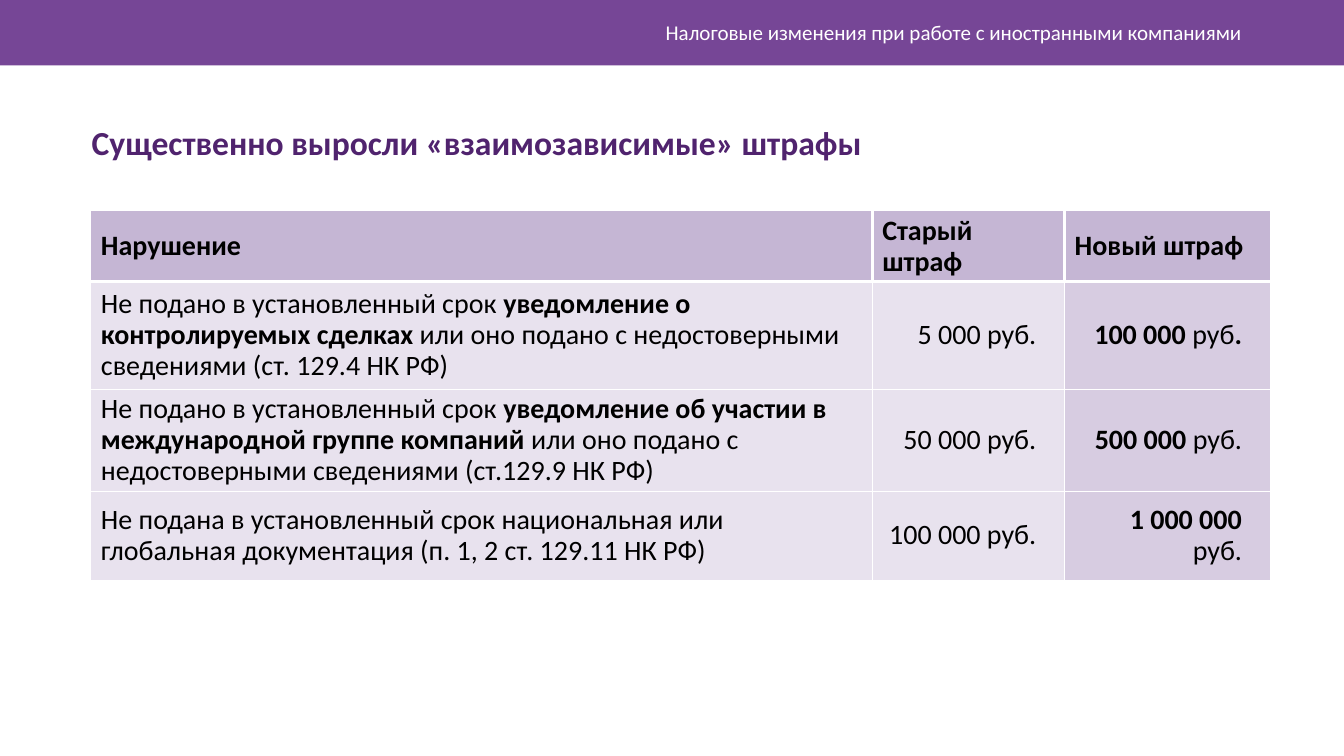
from lxml.etree import SubElement
from pptx import Presentation
from pptx.dml.color import RGBColor
from pptx.enum.shapes import MSO_SHAPE
from pptx.enum.text import MSO_ANCHOR, PP_ALIGN
from pptx.oxml.ns import qn
from pptx.util import Cm, Pt

BAND = RGBColor(0x76, 0x46, 0x96)
TITLE = RGBColor(0x50, 0x23, 0x6E)
CELL = RGBColor(0x8D, 0x6F, 0xAB)
WHITE = RGBColor(0xFF, 0xFF, 0xFF)
BLACK = RGBColor(0x00, 0x00, 0x00)

COLUMNS = [19.69, 4.85, 5.18]
ROWS = [1.45, 2.72, 2.57, 2.24]
FINES = [
    [[("Нарушение", True)], [("Старый штраф", True)], [("Новый штраф", True)]],
    [
        [
            ("Не подано в установленный срок ", False),
            ("уведомление о контролируемых сделках", True),
            (" или оно подано с недостоверными сведениями (ст. 129.4 НК РФ)", False),
        ],
        [("5 000 руб.", False)],
        [("100 000", True), (" руб", False), (".", True)],
    ],
    [
        [
            ("Не подано в установленный срок ", False),
            ("уведомление об участии в международной группе компаний ", True),
            ("или оно подано с недостоверными сведениями (ст.129.9 НК РФ)", False),
        ],
        [("50 000 руб.", False)],
        [("500 000 ", True), ("руб.", False)],
    ],
    [
        [("Не подана в установленный срок национальная или глобальная документация "
          "(п. 1, 2 ст. 129.11 НК РФ)", False)],
        [("100 000 руб.", False)],
        [("1 000 000 ", True), ("руб.", False)],
    ],
]


class SlideBuilder:
    def __init__(self, s, font):
        self.s = s
        self.font = font

    def add_runs(self, p, runs, size, color, align=PP_ALIGN.LEFT):
        p.alignment = align
        for text, bold in runs:
            r = p.add_run()
            r.text = text
            r.font.name = self.font
            r.font.size = Pt(size)
            r.font.bold = bold
            r.font.color.rgb = color

    def band(self, x, y, w, h, color):
        sp = self.s.shapes.add_shape(MSO_SHAPE.RECTANGLE, Cm(x), Cm(y), Cm(w), Cm(h))
        sp.shadow.inherit = False
        sp.fill.solid()
        sp.fill.fore_color.rgb = color
        sp.line.fill.background()

    def text(self, x, y, w, h, runs, size, color, align=PP_ALIGN.LEFT, anchor=MSO_ANCHOR.TOP):
        tf = self.s.shapes.add_textbox(Cm(x), Cm(y), Cm(w), Cm(h)).text_frame
        tf.word_wrap = True
        tf.vertical_anchor = anchor
        self.add_runs(tf.paragraphs[0], runs, size, color, align)

    def border(self, cell, side, width):
        ln = SubElement(cell._tc.get_or_add_tcPr(), qn(f"a:ln{side}"), w=str(Pt(width)))
        fill = SubElement(ln, qn("a:solidFill"))
        SubElement(fill, qn("a:srgbClr"), val=str(WHITE))

    def shade(self, cell, opacity):
        cell.fill.solid()
        cell.fill.fore_color.rgb = CELL
        color = cell._tc.tcPr.find(qn("a:solidFill")).find(qn("a:srgbClr"))
        SubElement(color, qn("a:alpha"), val=str(opacity * 1000))

    def table(self, x, y, columns, rows, data):
        frame = self.s.shapes.add_table(
            len(rows), len(columns), Cm(x), Cm(y), Cm(sum(columns)), Cm(sum(rows)))
        table = frame.table
        table.horz_banding = False
        for column, width in zip(table.columns, columns):
            column.width = Cm(width)
        for row, height in zip(table.rows, rows):
            row.height = Cm(height)
        for i, row in enumerate(data):
            for j, runs in enumerate(row):
                self.cell(table.cell(i, j), i, j, runs, len(rows) - 1, len(columns) - 1)

    def cell(self, cell, i, j, runs, last_row, last_column):
        header = i == 0
        inner = 2.25 if header else 1
        if j > 0:
            self.border(cell, "L", inner)
        if j < last_column:
            self.border(cell, "R", inner)
        if i > 0:
            self.border(cell, "T", 2.25 if i == 1 else 1)
        if i < last_row:
            self.border(cell, "B", inner)
        self.shade(cell, 50 if header else 35 if j == last_column else 20)
        cell.vertical_anchor = MSO_ANCHOR.MIDDLE
        amount = not header and j > 0
        if amount:
            cell.margin_right = Cm(0.71)
        p = cell.text_frame.paragraphs[0]
        p.line_spacing = 0.9
        self.add_runs(p, runs, 20, BLACK, PP_ALIGN.RIGHT if amount else PP_ALIGN.LEFT)


def main():
    prs = Presentation()
    prs.slide_width, prs.slide_height = Cm(33.87), Cm(19.05)
    slide = SlideBuilder(prs.slides.add_slide(prs.slide_layouts[6]), "Calibri")
    slide.band(0, 0, 33.87, 1.65, BAND)
    slide.text(8.99, 0.3, 22.56, 1.02,
               [("Налоговые изменения при работе с иностранными компаниями", False)],
               15, WHITE, PP_ALIGN.RIGHT, MSO_ANCHOR.MIDDLE)
    slide.text(2.06, 2.95, 20.98, 1.27,
               [("Существенно выросли «взаимозависимые» штрафы", True)], 24, TITLE)
    slide.table(2.29, 5.31, COLUMNS, ROWS, FINES)
    prs.save("out.pptx")


if __name__ == "__main__":
    main()
